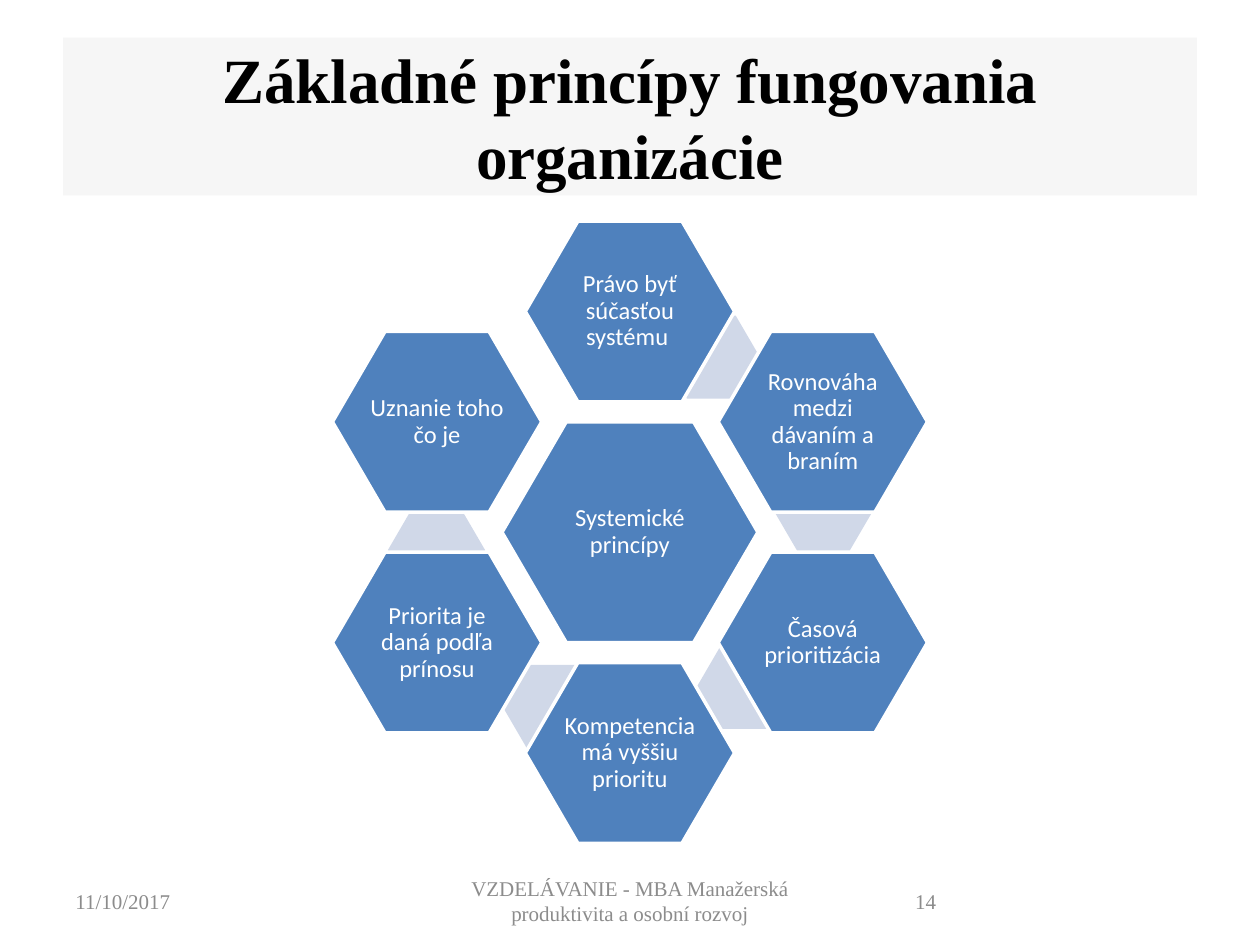
from math import cos, radians, sin

from lxml.etree import SubElement
from pptx import Presentation
from pptx.dml.color import RGBColor
from pptx.enum.shapes import MSO_SHAPE
from pptx.enum.text import MSO_ANCHOR, PP_ALIGN
from pptx.oxml.ns import qn
from pptx.util import Cm, Pt

TITLE = "Základné princípy fungovania organizácie"
CENTER = "Systemické princípy"
PRINCIPLES = [
    ("Právo byť súčasťou systému ", (1.64, -3.53)),
    ("Rovnováha medzi dávaním a braním", (3.9, -0.4)),
    ("Časová prioritizácia", (2.32, 3.13)),
    ("Kompetencia má vyššiu prioritu", (-1.59, 3.51)),
    ("Priorita je daná podľa prínosu", (-3.9, 0.36)),
    ("Uznanie toho čo je", None),
]
FOOTER = [
    ("11/10/2017", 1.27, 5.93, PP_ALIGN.LEFT),
    ("VZDELÁVANIE - MBA Manažerská produktivita a osobní rozvoj", 8.68, 8.04, PP_ALIGN.CENTER),
    ("14", 18.2, 5.93, PP_ALIGN.LEFT),
]
THEME = {
    "band": RGBColor(0xF2, 0xF2, 0xF2),
    "band_alpha": "63000",
    "hexagon": RGBColor(0x4F, 0x81, 0xBD),
    "link": RGBColor(0xD0, 0xD8, 0xE8),
    "outline": RGBColor(0xFF, 0xFF, 0xFF),
    "title": {"name": "Times New Roman", "size": Pt(36), "bold": True, "color": RGBColor(0, 0, 0)},
    "label": {"name": "Calibri", "size": Pt(14), "color": RGBColor(0xFF, 0xFF, 0xFF)},
    "footer": {"name": "Times New Roman", "size": Pt(12), "color": RGBColor(0x8C, 0x8C, 0x8C)},
}
MIDDLE = (12.7, 10.73)
RING = (4.49, 4.45)
CENTER_SIZE, HEX_SIZE, LINK_SIZE = (5.16, 4.47), (4.22, 3.66), (1.96, 1.68)


def write(sp, text, style, align, spacing=None):
    tf = sp.text_frame
    tf.word_wrap = True
    tf.vertical_anchor = MSO_ANCHOR.MIDDLE
    p = tf.paragraphs[0]
    p.alignment = align
    p.line_spacing = spacing
    r = p.add_run()
    r.text = text
    for key, value in THEME[style].items():
        if key == "color":
            r.font.color.rgb = value
        else:
            setattr(r.font, key, value)


def add_hexagon(s, offset, size, fill, text=None):
    (dx, dy), (w, h) = offset, size
    left, top = MIDDLE[0] + dx - w / 2, MIDDLE[1] + dy - h / 2
    sp = s.shapes.add_shape(MSO_SHAPE.HEXAGON, Cm(left), Cm(top), Cm(w), Cm(h))
    sp.shadow.inherit = False
    sp.adjustments[0] = 0.29
    sp.adjustments[1] = 1.15
    sp.fill.solid()
    sp.fill.fore_color.rgb = THEME[fill]
    if text is None:
        sp.line.fill.background()
        return
    sp.line.color.rgb = THEME["outline"]
    sp.line.width = Pt(2)
    for side in ("left", "top", "right", "bottom"):
        setattr(sp.text_frame, f"margin_{side}", Cm(0.05))
    write(sp, text, "label", PP_ALIGN.CENTER, 0.9)


def add_title(s):
    sp = s.shapes.title
    sp.left, sp.top, sp.width, sp.height = Cm(1.27), Cm(0.76), Cm(22.86), Cm(3.18)
    sp.fill.solid()
    sp.fill.fore_color.rgb = THEME["band"]
    color = sp.fill._xPr.find(qn("a:solidFill"))[0]
    SubElement(color, qn("a:alpha")).set("val", THEME["band_alpha"])
    write(sp, TITLE, "title", PP_ALIGN.CENTER)


def main():
    """Build the slide on the basic principles of an organisation."""
    prs = Presentation()
    prs.slide_width, prs.slide_height = Cm(25.4), Cm(19.05)
    s = prs.slides.add_slide(prs.slide_layouts[5])
    add_title(s)
    add_hexagon(s, (0, 0), CENTER_SIZE, "hexagon", CENTER)
    for i, (text, link) in enumerate(PRINCIPLES):
        if link:
            add_hexagon(s, link, LINK_SIZE, "link")
        angle = radians(60 * i)
        offset = RING[0] * sin(angle), -RING[1] * cos(angle)
        add_hexagon(s, offset, HEX_SIZE, "hexagon", text)
    for text, left, width, align in FOOTER:
        sp = s.shapes.add_textbox(Cm(left), Cm(17.65), Cm(width), Cm(1.02))
        write(sp, text, "footer", align)
    prs.save("out.pptx")


if __name__ == "__main__":
    main()
